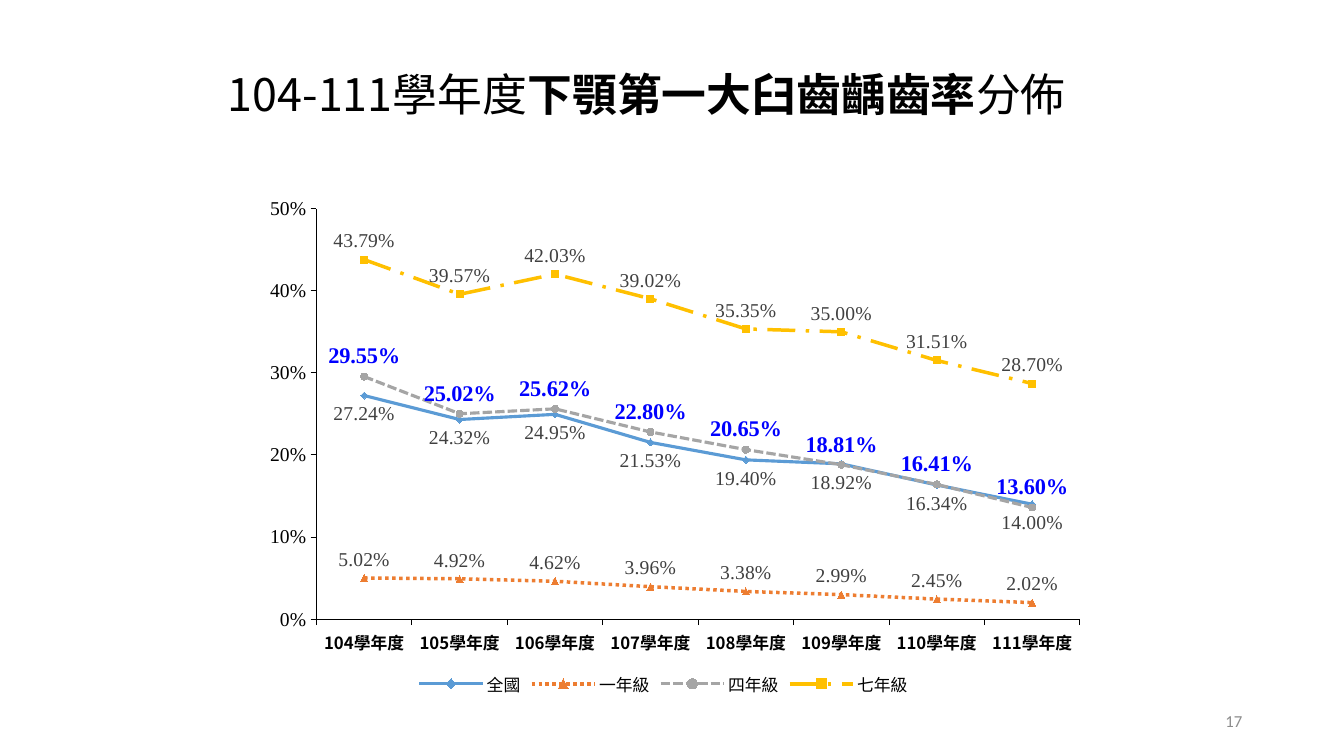
from lxml import etree
from pptx import Presentation
from pptx.chart.data import CategoryChartData
from pptx.dml.color import RGBColor
from pptx.enum.chart import (XL_CHART_TYPE, XL_LABEL_POSITION, XL_LEGEND_POSITION,
                             XL_MARKER_STYLE, XL_TICK_MARK)
from pptx.enum.dml import MSO_LINE
from pptx.enum.text import MSO_ANCHOR, PP_ALIGN
from pptx.oxml.ns import qn
from pptx.util import Inches, Pt

ABOVE, BELOW = XL_LABEL_POSITION.ABOVE, XL_LABEL_POSITION.BELOW
SOLID, DOTTED = MSO_LINE.SOLID, MSO_LINE.ROUND_DOT
DASHED, DASH_DOT = MSO_LINE.SQUARE_DOT, MSO_LINE.LONG_DASH_DOT
DIAMOND, TRIANGLE = XL_MARKER_STYLE.DIAMOND, XL_MARKER_STYLE.TRIANGLE
CIRCLE, SQUARE = XL_MARKER_STYLE.CIRCLE, XL_MARKER_STYLE.SQUARE
CJK, SERIF, SANS = "Noto Sans CJK SC", "Times New Roman", "Calibri"
GREY_LABEL = {"name": SERIF, "size": Pt(14), "color": "404040"}
BLUE_LABEL = {"name": SERIF, "size": Pt(16), "color": "0000FF", "bold": True}

YEARS = [f"{year}學年度" for year in range(104, 112)]
# name, percentages, colour, line width, dash, marker, label position, label format
GRADES = [
    ("全國", [27.24, 24.32, 24.95, 21.53, 19.40, 18.92, 16.34, 14.00],
     "5B9BD5", 2.25, SOLID, DIAMOND, BELOW, GREY_LABEL),
    ("一年級", [5.02, 4.92, 4.62, 3.96, 3.38, 2.99, 2.45, 2.02],
     "ED7D31", 2.5, DOTTED, TRIANGLE, ABOVE, GREY_LABEL),
    ("四年級", [29.55, 25.02, 25.62, 22.80, 20.65, 18.81, 16.41, 13.60],
     "A5A5A5", 2.25, DASHED, CIRCLE, ABOVE, BLUE_LABEL),
    ("七年級", [43.79, 39.57, 42.03, 39.02, 35.35, 35.00, 31.51, 28.70],
     "FFC000", 2.5, DASH_DOT, SQUARE, ABOVE, GREY_LABEL),
]


def rgb(value):
    return RGBColor.from_string(value)


def format_font(font, values):
    """Set font attributes; "color" is a hex string."""
    for name, value in values.items():
        if name == "color":
            font.color.rgb = rgb(value)
        else:
            setattr(font, name, value)


deck = Presentation()
deck.slide_width, deck.slide_height = Inches(13.33), Inches(7.5)
page = deck.slides.add_slide(deck.slide_layouts[5])

# Chart
data = CategoryChartData(number_format="0.00%")
data.categories = YEARS
for name, percentages, *_ in GRADES:
    data.add_series(name, [round(value / 100, 4) for value in percentages])
chart = page.shapes.add_chart(XL_CHART_TYPE.LINE_MARKERS, Inches(2.04), Inches(1.54),
                              Inches(9.08), Inches(5.41), data).chart
chart.has_title = False
chart.has_legend = True
chart.legend.position = XL_LEGEND_POSITION.BOTTOM
chart.legend.include_in_layout = False
format_font(chart.font, {"name": SANS, "size": Pt(10), "color": "000000"})
format_font(chart.legend.font, {"name": CJK, "size": Pt(12), "color": "000000"})
chart.plots[0].vary_by_categories = False

axis_fonts = [
    (chart.category_axis, {"name": CJK, "size": Pt(12), "bold": True, "color": "000000"}),
    (chart.value_axis, {"name": SERIF, "size": Pt(14), "bold": False, "color": "000000"}),
]
for axis, font_values in axis_fonts:
    axis.has_major_gridlines = False
    axis.major_tick_mark = XL_TICK_MARK.OUTSIDE
    axis.minor_tick_mark = XL_TICK_MARK.NONE
    axis.format.line.color.rgb = rgb("000000")
    axis.format.line.width = Pt(0.75)
    format_font(axis.tick_labels.font, font_values)
percent_axis = chart.value_axis
percent_axis.minimum_scale, percent_axis.maximum_scale = 0, 0.5
percent_axis.major_unit = 0.1
percent_axis.tick_labels.number_format = "0%"
percent_axis.tick_labels.number_format_is_linked = False

for series, grade in zip(chart.plots[0].series, GRADES):
    _, _, color, width, dash, marker_style, position, font_values = grade
    series.smooth = False
    line = series.format.line
    line.color.rgb = rgb(color)
    line.width = Pt(width)
    line.dash_style = dash
    marker = series.marker
    marker.style, marker.size = marker_style, 5
    marker.format.fill.solid()
    marker.format.fill.fore_color.rgb = rgb(color)
    marker.format.line.color.rgb = rgb(color)
    labels = series.data_labels
    labels.show_value = True
    labels.position = position
    labels.number_format = "0.00%"
    labels.number_format_is_linked = False
    format_font(labels.font, font_values)

# Fixed inner plot area, as fractions of the chart
chart_root = chart.element
plot_area = chart_root.find(".//" + qn("c:plotArea"))
for old_layout in plot_area.findall(qn("c:layout")):
    plot_area.remove(old_layout)
layout = etree.Element(qn("c:layout"))
manual = etree.SubElement(layout, qn("c:manualLayout"))
for tag, value in [("layoutTarget", "inner"), ("xMode", "edge"), ("yMode", "edge"),
                   ("x", "0.121"), ("y", "0.098"), ("w", "0.834"), ("h", "0.753")]:
    etree.SubElement(manual, qn("c:" + tag)).set("val", value)
plot_area.insert(0, layout)

# Title
title = page.shapes.title
title.left, title.top = Inches(2.16), Inches(0.24)
title.width, title.height = Inches(9.31), Inches(1.45)
title.text_frame.vertical_anchor = MSO_ANCHOR.MIDDLE
para = title.text_frame.paragraphs[0]
para.alignment, para.line_spacing = PP_ALIGN.LEFT, 0.9
for text, bold in [("104-111學年度", False), ("下顎第一大臼齒齲齒率", True), ("分佈", False)]:
    span = para.add_run()
    span.text = text
    format_font(span.font, {"name": CJK, "size": Pt(32), "bold": bold, "color": "000000"})

# Page number
box = page.shapes.add_textbox(Inches(9.42), Inches(6.95), Inches(3), Inches(0.4))
box.text_frame.word_wrap = True
box.text_frame.vertical_anchor = MSO_ANCHOR.MIDDLE
para = box.text_frame.paragraphs[0]
para.alignment = PP_ALIGN.RIGHT
span = para.add_run()
span.text = "17"
format_font(span.font, {"name": SANS, "size": Pt(12), "color": "8C8C8C"})

# Chinese characters take the same font as the Latin ones
for root in (chart_root, title.element):
    for latin in list(root.iter(qn("a:latin"))):
        east_asian = etree.Element(qn("a:ea"))
        east_asian.set("typeface", latin.get("typeface"))
        latin.addnext(east_asian)

deck.save("out.pptx")
